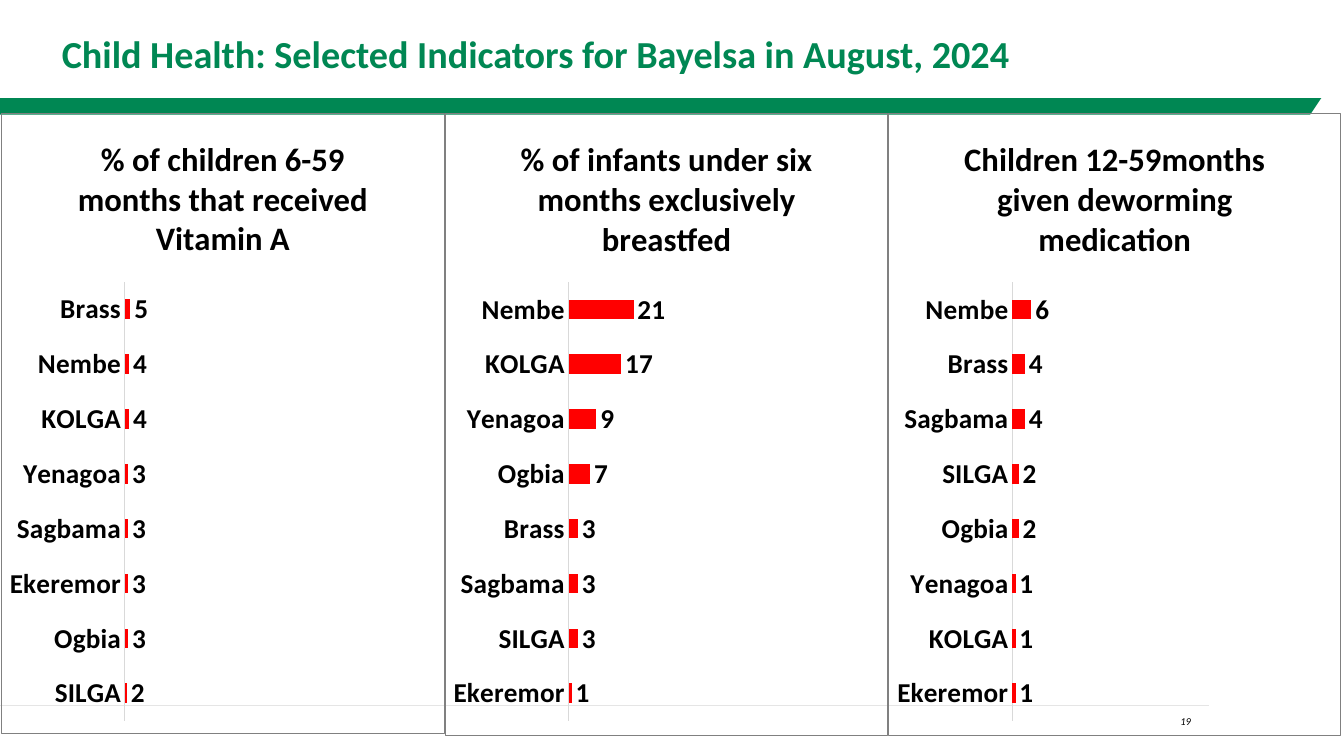
from lxml import etree
from pptx import Presentation
from pptx import util as u
from pptx.chart.data import CategoryChartData
from pptx.dml.color import RGBColor
from pptx.enum import chart as charts, shapes, text
from pptx.oxml import parse_xml
from pptx.oxml.ns import nsdecls, qn

PX = 9144  # 100 px to the inch
FONT = "Calibri"
GREEN = RGBColor(0x00, 0x87, 0x53)
WHITE = RGBColor(0xFF, 0xFF, 0xFF)
BLACK = RGBColor(0x00, 0x00, 0x00)
RED = RGBColor(0xFF, 0x00, 0x00)
RULE_GRAY = RGBColor(0xE5, 0xE5, 0xE5)
AXIS_GRAY = RGBColor(0xD9, 0xD9, 0xD9)
BORDER_GRAY = RGBColor(0x80, 0x80, 0x80)

# title, axis maximum, box, values from the bottom bar to the top one
INDICATORS = [
    ("% of children 6-59 months that received Vitamin A", 280, (1, 115, 452, 633),
     {"SILGA": 2, "Ogbia": 3, "Ekeremor": 3, "Sagbama": 3,
      "Yenagoa": 3, "KOLGA": 4, "Nembe": 4, "Brass": 5}),
    ("% of infants under six months exclusively breastfed", 100, (453, 115, 452, 635),
     {"Ekeremor": 1, "SILGA": 3, "Sagbama": 3, "Brass": 3,
      "Ogbia": 7, "Yenagoa": 9, "KOLGA": 17, "Nembe": 21}),
    ("Children 12-59months given deworming medication", 100, (905, 115, 461, 635),
     {"Ekeremor": 1, "KOLGA": 1, "Yenagoa": 1, "Ogbia": 2,
      "SILGA": 2, "Sagbama": 4, "Brass": 4, "Nembe": 6}),
]


def scaled(*lengths):
    return [u.Emu(length * PX) for length in lengths]


def set_font(font, size, color, bold=False, italic=False):
    font.name, font.size = FONT, u.Pt(size)
    font.bold, font.italic = bold, italic
    font.color.rgb = color


def add_filled_shape(slide, kind, box, color):
    shape = slide.shapes.add_shape(kind, *scaled(*box))
    shape.shadow.inherit = False
    shape.fill.solid()
    shape.fill.fore_color.rgb = color
    shape.line.fill.background()


def add_text(slide, box, words):
    """Add a one-paragraph text box and return its frame and paragraph."""
    frame = slide.shapes.add_textbox(*scaled(*box)).text_frame
    frame.word_wrap = True
    paragraph = frame.paragraphs[0]
    paragraph.text = words
    return frame, paragraph


def add_header(slide, left, top, width, height):
    frame, paragraph = add_text(
        slide, (left + 43, top + 16, 1130, 76),
        "Child Health: Selected Indicators for Bayelsa in August, 2024")
    frame.vertical_anchor = text.MSO_ANCHOR.MIDDLE
    frame.margin_left = u.Emu(20 * PX)
    set_font(paragraph.font, 28, GREEN, bold=True)
    band_top = top + height - 17
    add_filled_shape(slide, shapes.MSO_SHAPE.RECTANGLE, (left, band_top, width, 17), GREEN)
    add_filled_shape(slide, shapes.MSO_SHAPE.ISOSCELES_TRIANGLE,
                     (left + width - 14, band_top, 28, 21), WHITE)


def add_footer(slide, left, top, width):
    rule = slide.shapes.add_connector(
        shapes.MSO_CONNECTOR.STRAIGHT, *scaled(left, top, left + width, top))
    rule.line.color.rgb = RULE_GRAY
    rule.line.width = u.Pt(1)
    etree.SubElement(rule._element.spPr, qn("a:effectLst"))
    _, paragraph = add_text(slide, (left + width - 137, top + 5, 128, 24), "19")
    paragraph.alignment = text.PP_ALIGN.RIGHT
    set_font(paragraph.font, 7.7, BLACK, italic=True)


def frame_chart(chart):
    """Give the chart area a thin border and no fill."""
    chart._chartSpace.find(qn("c:chart")).addnext(parse_xml(
        f'<c:spPr {nsdecls("c", "a")}><a:noFill/><a:ln w="9525"><a:solidFill>'
        f'<a:srgbClr val="{BORDER_GRAY}"/></a:solidFill></a:ln></c:spPr>'))


def place_plot(chart, x, y, w, h):
    """Fix the inner plot area, in fractions of the chart."""
    plot_area = chart._chartSpace.find(qn("c:chart")).find(qn("c:plotArea"))
    for layout in plot_area.findall(qn("c:layout")):
        plot_area.remove(layout)
    sizes = "".join(f'<c:{name} val="{value:.4f}"/>'
                    for name, value in zip("xywh", (x, y, w, h)))
    plot_area.insert(0, parse_xml(
        f'<c:layout {nsdecls("c")}><c:manualLayout><c:layoutTarget val="inner"/>'
        f'<c:xMode val="edge"/><c:yMode val="edge"/>{sizes}'
        '</c:manualLayout></c:layout>'))


def add_indicator(slide, title, maximum, box, values):
    width, height = box[2:]
    data = CategoryChartData(number_format="0")
    data.categories = list(values)
    data.add_series(title, list(values.values()))
    chart = slide.shapes.add_chart(
        charts.XL_CHART_TYPE.BAR_CLUSTERED, *scaled(*box), data).chart
    set_font(chart.font, 20, BLACK, bold=True)
    chart.has_legend = False
    chart.has_title = True
    heading = chart.chart_title.text_frame.paragraphs[0]
    heading.text = title
    set_font(heading.font, 24, BLACK, bold=True)
    chart.chart_title.include_in_layout = False

    categories = chart.category_axis
    categories.major_tick_mark = charts.XL_TICK_MARK.NONE
    categories.format.line.color.rgb = AXIS_GRAY
    categories.format.line.width = u.Pt(0.75)
    set_font(categories.tick_labels.font, 20, BLACK, bold=True)
    scale = chart.value_axis
    scale.minimum_scale, scale.maximum_scale = 0, maximum
    scale.has_major_gridlines = False
    scale.visible = False

    plot = chart.plots[0]
    plot.gap_width = 182
    plot.vary_by_categories = False
    fill = plot.series[0].format.fill
    fill.solid()
    fill.fore_color.rgb = RED
    plot.has_data_labels = True
    labels = plot.data_labels
    labels.show_value = True
    labels.number_format, labels.number_format_is_linked = "0", False
    labels.position = charts.XL_LABEL_POSITION.OUTSIDE_END
    set_font(labels.font, 20, BLACK, bold=True)
    frame_chart(chart)
    place_plot(chart, 126 / width, 172 / height, (width - 136) / width, 448 / height)


def main():
    presentation = Presentation()
    presentation.slide_width, presentation.slide_height = scaled(1369, 750)
    slide = presentation.slides.add_slide(presentation.slide_layouts[6])
    add_header(slide, 0, 0, 1346, 117)
    add_footer(slide, 0, 719, 1232)
    for indicator in INDICATORS:
        add_indicator(slide, *indicator)
    presentation.save("out.pptx")


if __name__ == "__main__":
    main()
